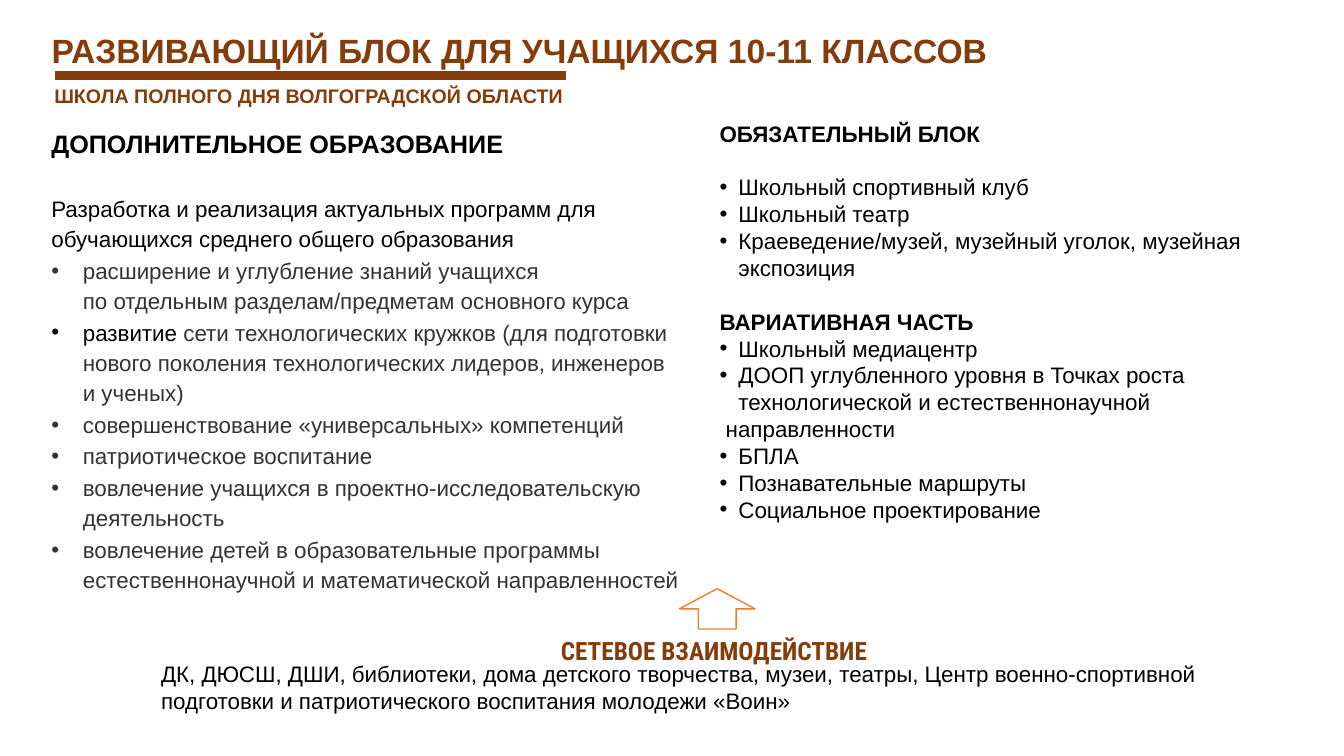
from lxml import etree
from pptx import Presentation
from pptx.dml.color import RGBColor
from pptx.enum.shapes import MSO_CONNECTOR as CONN, MSO_SHAPE as SHAPE
from pptx.enum.text import MSO_ANCHOR as ANCHOR, MSO_AUTO_SIZE as FIT, PP_ALIGN as ALIGN
from pptx.oxml.ns import qn
from pptx.util import Pt

BROWN = RGBColor(0x84, 0x3C, 0x0B)
BLACK = RGBColor(0, 0, 0)
GREY = RGBColor(0x33, 0x33, 0x33)
ORANGE = RGBColor(0xED, 0x7D, 0x31)
WHITE = RGBColor(0xFF, 0xFF, 0xFF)


def write(p, runs, indent=0, **form):
    """Fill a paragraph with (text, font format) runs; an indent adds a bullet."""
    for name, value in form.items():
        setattr(p, name, value)
    for text, font in runs:
        for i, line in enumerate(text.split("\n")):
            if i:
                p.add_line_break()
            r = p.add_run()
            r.text = line
            for name, value in ({"name": "Arial", "bold": False} | font).items():
                if name == "color":
                    r.font.color.rgb = value
                else:
                    setattr(r.font, name, value)
    if indent:
        pPr = p._p.get_or_add_pPr()
        pPr.set("marL", str(Pt(indent)))
        pPr.set("indent", str(-Pt(indent)))
        etree.SubElement(pPr, qn("a:buFont")).set("typeface", "Arial")
        etree.SubElement(pPr, qn("a:buChar")).set("char", "•")


def add_text(left, top, width, height, paragraphs, wrap=True):
    """Add a text box from (runs, paragraph format) pairs."""
    tf = s.shapes.add_textbox(Pt(left), Pt(top), Pt(width), Pt(height)).text_frame
    tf.word_wrap = wrap
    tf.auto_size = FIT.SHAPE_TO_FIT_TEXT
    for i, (runs, form) in enumerate(paragraphs):
        write(tf.add_paragraph() if i else tf.paragraphs[0], runs, **form)


prs = Presentation()
prs.slide_width, prs.slide_height = Pt(960), Pt(540)
s = prs.slides.add_slide(prs.slide_layouts[5])

# Title
title = s.shapes.title
title.left, title.top, title.width, title.height = Pt(20), Pt(7.2), Pt(702), Pt(61.2)
tf = title.text_frame
tf.auto_size, tf.vertical_anchor = FIT.NONE, ANCHOR.MIDDLE
write(tf.paragraphs[0],
      [("РАЗВИВАЮЩИЙ БЛОК ДЛЯ УЧАЩИХСЯ 10-11 КЛАССОВ",
        {"size": Pt(24), "bold": True, "color": BROWN})],
      alignment=ALIGN.CENTER, line_spacing=0.9)

# Rule and subtitle
rule = s.shapes.add_connector(CONN.STRAIGHT, Pt(39.6), Pt(54), Pt(404.6), Pt(54))
rule.line.color.rgb, rule.line.width = BROWN, Pt(6)
etree.SubElement(rule._element.spPr, qn("a:effectLst"))
add_text(31.7, 56.2, 381, 24.5,
         [([("ШКОЛА ПОЛНОГО ДНЯ ВОЛГОГРАДСКОЙ ОБЛАСТИ",
             {"size": Pt(14), "bold": True, "color": BROWN})], {})], wrap=False)

# Left column: additional education
heading = {"size": Pt(18), "bold": True, "color": BLACK}
body = {"size": Pt(16), "color": BLACK}
grey = {"size": Pt(16), "color": GREY}
loose = {"line_spacing": Pt(21.6), "space_before": Pt(1)}
goals = [
    [("расширение и углубление знаний учащихся\n"
      "по отдельным разделам/предметам основного курса", grey)],
    [("развитие ", body),
     ("сети технологических кружков (для подготовки нового поколения "
      "технологических лидеров, инженеров \nи ученых)", grey)],
    [("совершенствование «универсальных» компетенций", grey)],
    [("патриотическое воспитание", grey)],
    [("вовлечение учащихся в проектно-исследовательскую деятельность", grey)],
    [("вовлечение детей в образовательные программы естественнонаучной "
      "и математической направленностей", grey)],
]
add_text(29.6, 87.8, 480, 347, [
    ([("ДОПОЛНИТЕЛЬНОЕ ОБРАЗОВАНИЕ", heading)], loose),
    ([("Разработка и реализация актуальных программ для обучающихся "
       "среднего общего образования", body)], loose | {"space_before": Pt(24)}),
    *[(runs, loose | {"indent": 22.5}) for runs in goals],
])

# Right column: mandatory and variable parts
bold = body | {"bold": True}
bullet = {"indent": 13.5}
gap = {"space_before": Pt(19.2)}
add_text(506.9, 82, 411, 298, [
    ([("ОБЯЗАТЕЛЬНЫЙ БЛОК", bold)], {}),
    ([("Школьный спортивный клуб", body)], bullet | gap),
    ([("Школьный театр", body)], bullet),
    ([("Краеведение/музей, музейный уголок, музейная экспозиция", body)], bullet),
    ([("ВАРИАТИВНАЯ ЧАСТЬ", bold)], gap),
    ([("Школьный медиацентр", body)], bullet),
    ([("ДООП углубленного уровня в Точках роста технологической "
       "и естественнонаучной", body)], bullet),
    ([(" направленности", body)], {}),
    *[([(text, body)], bullet) for text in
      ("БПЛА", "Познавательные маршруты", "Социальное проектирование")],
])

# Network cooperation
add_text(234, 450, 552, 29.5,
         [([("СЕТЕВОЕ ВЗАИМОДЕЙСТВИЕ",
             heading | {"name": "Roboto Condensed", "color": BROWN})],
           loose | {"alignment": ALIGN.CENTER})])
add_text(108, 468, 798, 46,
         [([("ДК, ДЮСШ, ДШИ, библиотеки, дома детского творчества, музеи, театры, "
             "Центр военно-спортивной подготовки и патриотического воспитания "
             "молодежи «Воин»", body)], {})])
arrow = s.shapes.add_shape(SHAPE.UP_ARROW, Pt(485.3), Pt(420.5), Pt(54), Pt(28.8))
arrow.shadow.inherit = False
arrow.fill.solid()
arrow.fill.fore_color.rgb = WHITE
arrow.line.color.rgb, arrow.line.width = ORANGE, Pt(1)

prs.save("out.pptx")
